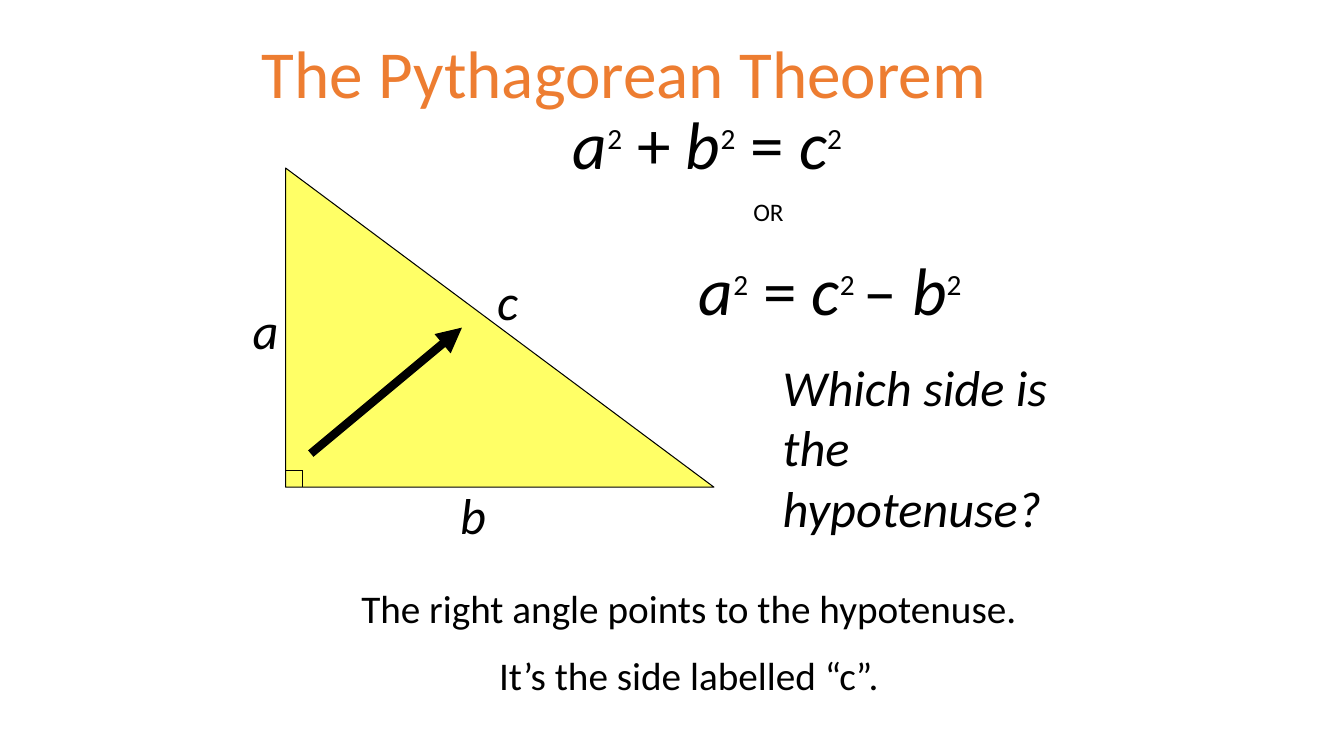
"""Builds a slide on the Pythagorean theorem with a labelled right triangle."""
import pptx
import pptx.dml.color
import pptx.enum.shapes
import pptx.enum.text
import pptx.oxml.ns
import pptx.util
from lxml import etree

THEME = {
    "font": "Calibri",
    "colours": {"ink": "000000", "title": "ED7D31", "triangle": "FFFF66"},
    "sizes": {"title": 48, "term": 48, "label": 36, "closing": 28, "small": 18},
    "lines": {"thin": 0.75, "arrow": 6},
    "paragraph_gap": 14,
}
STYLES = {
    "title": {"size": "title", "colour": "title"},
    "variable": {"size": "term", "italic": True},
    "operator": {"size": "term"},
    "power": {"size": "label", "baseline": 40},
    "raised": {"size": "term", "baseline": 30},
    "label": {"size": "label", "italic": True},
    "closing": {"size": "closing"},
    "small": {"size": "small"},
}


def squared(letter):
    return [(letter, "variable"), ("2", "power")]


SUM_FORMULA = (squared("a") + [(" + ", "operator")] + squared("b")
               + [(" = ", "operator")] + squared("c"))
SIDE_FORMULA = (squared("a") + [(" = ", "operator")] + squared("c")
                + [(" ", "raised"), ("– ", "operator")] + squared("b"))
CLOSING = [[("The right angle points to the hypotenuse.", "closing")],
           [("It’s the side labelled “c”.", "closing")]]

COLUMNS, ROWS = 160, 90
TEXTS = [
    ((30, 3.2, 100, 10.8), [[("The Pythagorean Theorem", "title")]], {}),
    ((67, 11.6, 51, 10.8), [SUM_FORMULA], {}),
    ((92, 41.8, 42, 23), [[("Which side is the hypotenuse?", "label")]], {}),
    ((82, 29, 42, 10.8), [SIDE_FORMULA], {}),
    ((30, 69, 104, 15.2), CLOSING, {"centred": True}),
    ((88.5, 22.8, 13, 4.8), [[("OR", "small")]], {}),
]
SIDE_LABELS = {"a": (28.9, 35), "b": (53.6, 57), "c": (58, 31.6)}
LABEL_SIZE = (5.5, 8.5)
TRIANGLE = (34, 20, 51, 38)
CORNER = 2
ARROW = ((37, 54), (55, 39))

deck = pptx.Presentation()
deck.slide_width = pptx.util.Inches(13.33)
deck.slide_height = pptx.util.Inches(7.5)
slide = deck.slides.add_slide(deck.slide_layouts[6])


def across(columns):
    return round(deck.slide_width * columns / COLUMNS)


def down(rows):
    return round(deck.slide_height * rows / ROWS)


def place(left, top, width, height):
    return across(left), down(top), across(width), down(height)


def colour(name):
    return pptx.dml.color.RGBColor.from_string(THEME["colours"][name])


def add_run(paragraph, words, style):
    look = STYLES[style]
    run = paragraph.add_run()
    run.text = words
    values = {"name": THEME["font"],
              "size": pptx.util.Pt(THEME["sizes"][look["size"]]),
              "italic": look.get("italic", False)}
    for key, value in values.items():
        setattr(run.font, key, value)
    run.font.color.rgb = colour(look.get("colour", "ink"))
    if "baseline" in look:
        run.font._element.set("baseline", str(look["baseline"] * 1000))


def add_text(area, paragraphs, centred=False, wrap=True):
    frame = slide.shapes.add_textbox(*place(*area)).text_frame
    frame.word_wrap = wrap
    frame.auto_size = pptx.enum.text.MSO_AUTO_SIZE.SHAPE_TO_FIT_TEXT
    for index, runs in enumerate(paragraphs):
        paragraph = frame.add_paragraph() if index else frame.paragraphs[0]
        if index:
            paragraph.space_before = pptx.util.Pt(THEME["paragraph_gap"])
        if centred:
            paragraph.alignment = pptx.enum.text.PP_ALIGN.CENTER
        for words, style in runs:
            add_run(paragraph, words, style)


def add_line(start, end, weight, arrowhead=False):
    line = slide.shapes.add_connector(
        pptx.enum.shapes.MSO_CONNECTOR.STRAIGHT,
        across(start[0]), down(start[1]), across(end[0]), down(end[1]))
    line.line.color.rgb = colour("ink")
    line.line.width = pptx.util.Pt(THEME["lines"][weight])
    if arrowhead:
        etree.SubElement(line.line._get_or_add_ln(),
                         pptx.oxml.ns.qn("a:tailEnd"), type="triangle")
    etree.SubElement(line._element.spPr, pptx.oxml.ns.qn("a:effectLst"))


def add_triangle():
    triangle = slide.shapes.add_shape(
        pptx.enum.shapes.MSO_SHAPE.RIGHT_TRIANGLE, *place(*TRIANGLE))
    triangle.shadow.inherit = False
    triangle.fill.solid()
    triangle.fill.fore_color.rgb = colour("triangle")
    triangle.line.color.rgb = colour("ink")
    triangle.line.width = pptx.util.Pt(THEME["lines"]["thin"])
    left, top, _, height = TRIANGLE
    base = top + height
    inner = (left + CORNER, base - CORNER)
    add_line((left, base - CORNER), inner, "thin")
    add_line(inner, (left + CORNER, base), "thin")


def main():
    add_triangle()
    for letter, corner in SIDE_LABELS.items():
        add_text(corner + LABEL_SIZE, [[(letter, "label")]], wrap=False)
    for area, paragraphs, options in TEXTS:
        add_text(area, paragraphs, **options)
    add_line(*ARROW, "arrow", arrowhead=True)
    deck.save("out.pptx")


if __name__ == "__main__":
    main()
